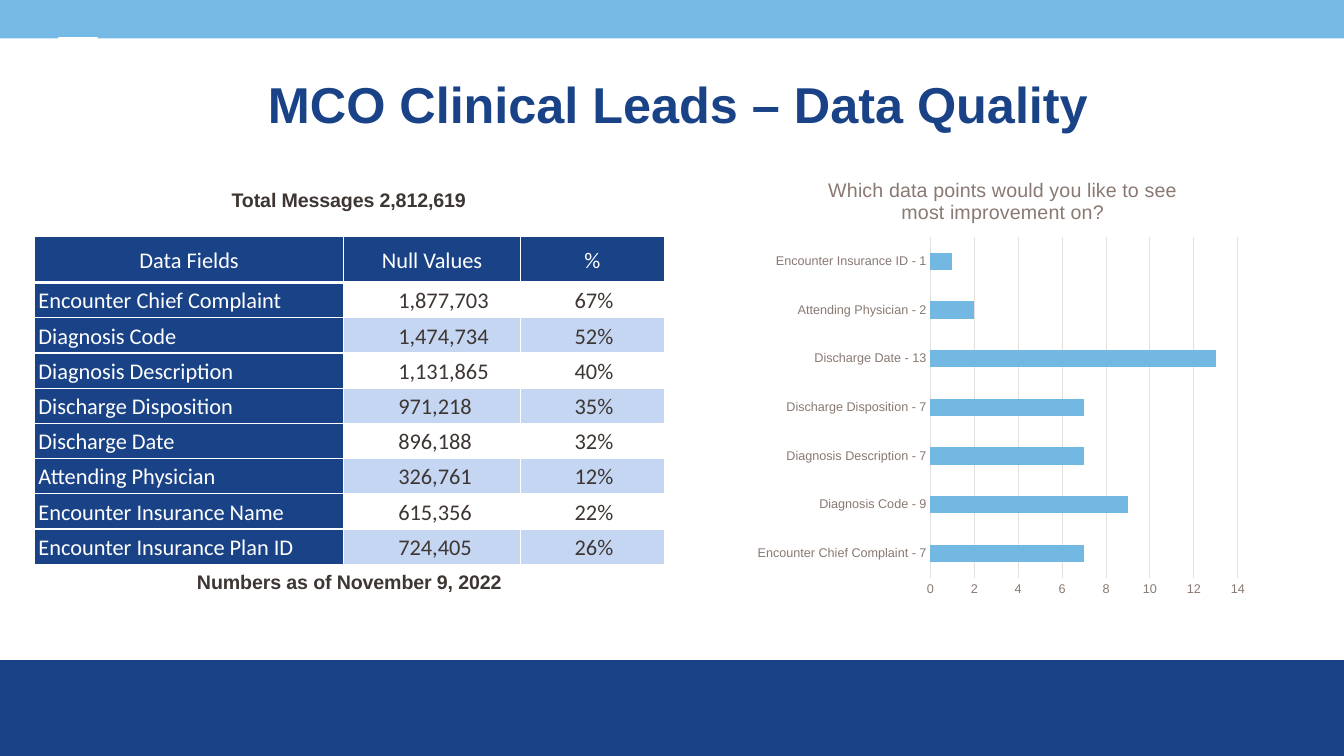
from lxml import etree
from pptx import Presentation
from pptx.chart.data import CategoryChartData
from pptx.dml.color import RGBColor
from pptx.enum.chart import XL_CHART_TYPE, XL_TICK_MARK
from pptx.enum.shapes import MSO_SHAPE
from pptx.enum.text import MSO_ANCHOR, PP_ALIGN
from pptx.oxml import parse_xml
from pptx.oxml.ns import nsdecls, qn
from pptx.util import Pt

BAR_CLUSTERED = XL_CHART_TYPE.BAR_CLUSTERED
NO_TICK = XL_TICK_MARK.NONE
RECTANGLE = MSO_SHAPE.RECTANGLE
TOP, MIDDLE = MSO_ANCHOR.TOP, MSO_ANCHOR.MIDDLE
LEFT, CENTER = PP_ALIGN.LEFT, PP_ALIGN.CENTER

COLORS = {name: RGBColor.from_string(value) for name, value in {
    "navy": "1A4387", "sky": "75B9E5", "white": "FFFFFF", "ink": "3D3633",
    "band": "C5D6F3", "bar": "73B8E3", "label": "897972", "grid": "E4E0DE",
}.items()}


def style(font, name, size, color, bold=False):
    font.name, font.size, font.bold = name, Pt(size), bold
    font.color.rgb = COLORS[color]


def set_layout(parent, position, **fractions):
    """Place a chart part by fractions of the chart area."""
    for old in parent.findall(qn("c:layout")):
        parent.remove(old)
    layout = parse_xml(f'<c:layout {nsdecls("c")}><c:manualLayout/></c:layout>')
    for tag, value in fractions.items():
        etree.SubElement(layout[0], qn(f"c:{tag}")).set("val", str(value))
    parent.insert(position, layout)


prs = Presentation()
prs.slide_width, prs.slide_height = Pt(960), Pt(540)
slide = prs.slides.add_slide(prs.slide_layouts[5])

# Page bands and the small white notch
for left, top, width, height, color in [
    (0, 471.6, 960, 68.4, "navy"),
    (0, 0, 960, 27.4, "sky"),
    (41.8, 26.6, 28, 29.5, "white"),
]:
    band = slide.shapes.add_shape(RECTANGLE, Pt(left), Pt(top), Pt(width), Pt(height))
    band.shadow.inherit = False
    band.fill.solid()
    band.fill.fore_color.rgb = COLORS[color]
    band.line.fill.background()

# Title
title = slide.shapes.title
title.left, title.top, title.width, title.height = Pt(183), Pt(46), Pt(603), Pt(104.4)
title.text_frame.vertical_anchor = TOP
title.text_frame.margin_top = Pt(11)
heading = title.text_frame.paragraphs[0]
heading.alignment = CENTER
heading.line_spacing = 0.9
heading_run = heading.add_run()
heading_run.text = "MCO Clinical Leads – Data Quality"
style(heading_run.font, "Arial", 36, "navy", True)

# Table of null values
rows = [
    ("Data Fields", "Null Values", "%"),
    ("Encounter Chief Complaint", "1,877,703", "67%"),
    ("Diagnosis Code", "1,474,734", "52%"),
    ("Diagnosis Description", "1,131,865", "40%"),
    ("Discharge Disposition", "971,218", "35%"),
    ("Discharge Date", "896,188", "32%"),
    ("Attending Physician", "326,761", "12%"),
    ("Encounter Insurance Name", "615,356", "22%"),
    ("Encounter Insurance Plan ID", "724,405", "26%"),
]
null_values = slide.shapes.add_table(
    len(rows), 3, Pt(24.6), Pt(168.8), Pt(450), Pt(232.3)).table
for column, width in zip(null_values.columns, (221, 126, 103)):
    column.width = Pt(width)

for r, row in enumerate(rows):
    null_values.rows[r].height = Pt(24.9 if r else 33.1)
    for c, value in enumerate(row):
        is_header, is_label = r == 0, c == 0
        cell = null_values.cell(r, c)
        cell.margin_left = cell.margin_right = Pt(2.9)
        cell.margin_top = cell.margin_bottom = Pt(2.1)
        cell.vertical_anchor = MIDDLE if is_header else TOP
        paragraph = cell.text_frame.paragraphs[0]
        paragraph.alignment = CENTER if is_header else LEFT
        paragraph.line_spacing = 1.07
        if not (is_header or is_label):
            properties = paragraph._p.get_or_add_pPr()
            properties.set("marL", str(Pt(36)))
            properties.set("indent", "0")
        run = paragraph.add_run()
        run.text = value
        style(run.font, "Calibri", 16, "white" if is_header or is_label else "ink")

        # White borders, drawn before the fill; thicker under the header
        cell_properties = cell._tc.get_or_add_tcPr()
        for side in ("lnL", "lnR", "lnT", "lnB"):
            thick = (side == "lnB" and r == 0) or (side == "lnT" and r == 1)
            cell_properties.append(parse_xml(
                f'<a:{side} {nsdecls("a")} w="{Pt(3 if thick else 1)}"><a:solidFill>'
                f'<a:srgbClr val="{COLORS["white"]}"/></a:solidFill></a:{side}>'))
        cell.fill.solid()
        cell.fill.fore_color.rgb = COLORS[
            "navy" if is_header or is_label else "white" if r % 2 else "band"]

# Captions below and above the table
for text, left, top, width in [
    ("Numbers as of November 9, 2022", 57.6, 406.1, 383.8),
    ("Total Messages 2,812,619", 131, 133.2, 236.2),
]:
    caption = slide.shapes.add_textbox(Pt(left), Pt(top), Pt(width), Pt(18)).text_frame
    caption.word_wrap = True
    caption.margin_left = caption.margin_right = caption.margin_bottom = 0
    caption.margin_top = Pt(1)
    caption.paragraphs[0].alignment = CENTER
    run = caption.paragraphs[0].add_run()
    run.text = text
    style(run.font, "Arial", 14, "ink", True)
    run.font._element.set("spc", "-10")

# Poll chart
votes = [
    ("Encounter Chief Complaint", 7), ("Diagnosis Code", 9),
    ("Diagnosis Description", 7), ("Discharge Disposition", 7),
    ("Discharge Date", 13), ("Attending Physician", 2),
    ("Encounter Insurance ID", 1),
]
poll_data = CategoryChartData()
poll_data.categories = [f"{field} - {count}" for field, count in votes]
poll_data.add_series("Series 1", [count for _, count in votes])
poll = slide.shapes.add_chart(
    BAR_CLUSTERED, Pt(535), Pt(111.6), Pt(360), Pt(320.4), poll_data).chart
style(poll.font, "Arial", 10, "ink")
poll.has_legend = False

question = poll.chart_title.text_frame.paragraphs[0].add_run()
question.text = "Which data points would you like to see most improvement on?"
style(question.font, "Arial", 14, "label")
poll.chart_title.include_in_layout = False
set_layout(poll.chart_title._element, 1, xMode="edge", yMode="edge", x=0.15, y=0.04)
set_layout(poll._chartSpace.chart.plotArea, 0, layoutTarget="inner",
           xMode="edge", yMode="edge", x=0.36, y=0.18, w=0.61, h=0.76)

plot = poll.plots[0]
plot.gap_width = 182
plot.vary_by_categories = False
bars = plot.series[0].format.fill
bars.solid()
bars.fore_color.rgb = COLORS["bar"]

for axis in (poll.category_axis, poll.value_axis):
    axis.major_tick_mark = axis.minor_tick_mark = NO_TICK
    style(axis.tick_labels.font, "Arial", 9, "label")
poll.value_axis.minimum_scale, poll.value_axis.maximum_scale = 0, 14
poll.value_axis.major_unit = 2
poll.value_axis.format.line.fill.background()
for line in (poll.category_axis.format.line, poll.value_axis.major_gridlines.format.line):
    line.color.rgb = COLORS["grid"]
    line.width = Pt(0.75)

prs.save("out.pptx")
